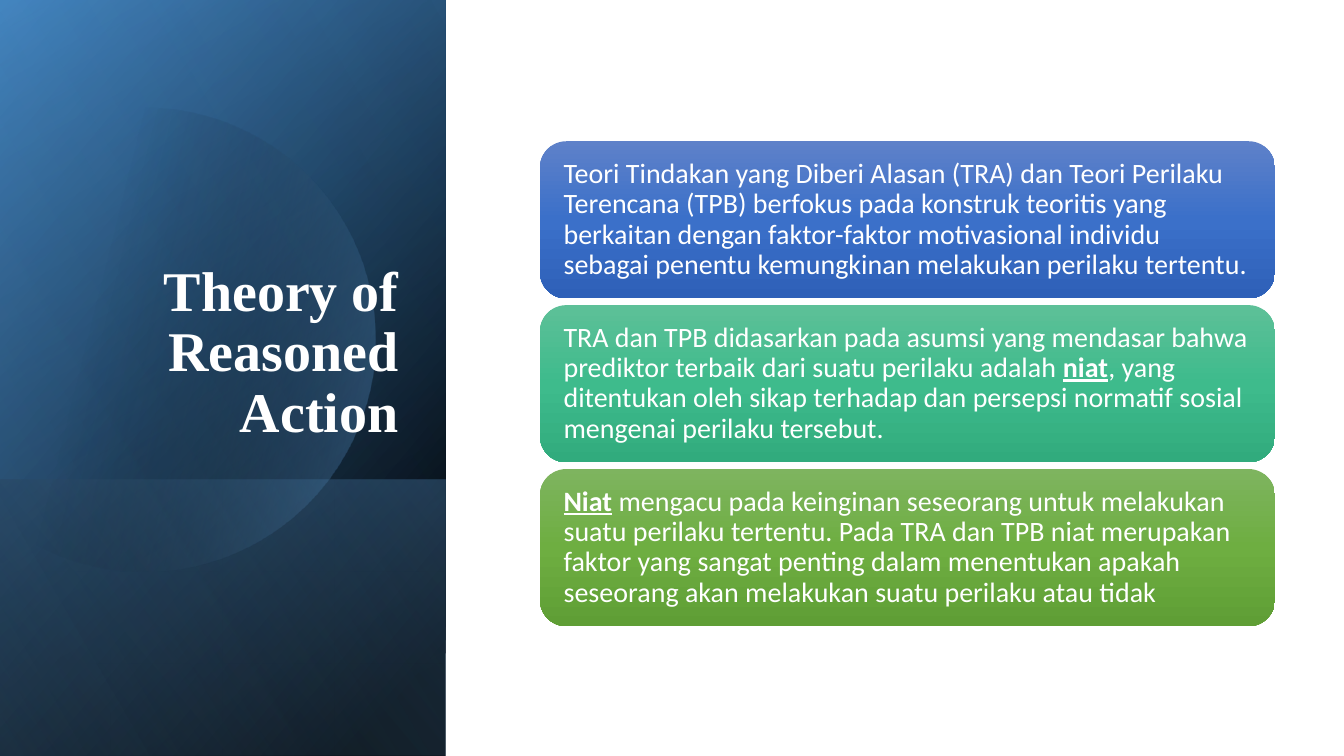
from math import cos, radians, sin

from lxml import etree
from pptx import Presentation
from pptx import util as u
from pptx.dml.color import RGBColor
from pptx.enum import shapes, text
from pptx.oxml.ns import qn

WHITE = RGBColor(0xFF, 0xFF, 0xFF)
BLACK = RGBColor(0x00, 0x00, 0x00)
DEEP_BLUE = RGBColor(0x2E, 0x75, 0xB5)
SKY_BLUE = RGBColor(0x5B, 0x9B, 0xD5)
PALE_BLUE = RGBColor(0x9C, 0xC2, 0xE5)
BLUES = RGBColor(0x5E, 0x81, 0xC9), RGBColor(0x3B, 0x70, 0xC9), RGBColor(0x2E, 0x60, 0xB8)
TEALS = RGBColor(0x5D, 0xC0, 0x98), RGBColor(0x3E, 0xBB, 0x8C), RGBColor(0x31, 0xAB, 0x7D)
GREENS = RGBColor(0x7E, 0xB4, 0x5F), RGBColor(0x6E, 0xAE, 0x41), RGBColor(0x5F, 0x9E, 0x35)

SLIDE_WIDTH, SLIDE_HEIGHT = 33.87, 19.05
PANEL_WIDTH = 11.23
BAND_TOP = 12.09

CARDS = [
    (BLUES, [
        ("Teori Tindakan yang Diberi Alasan (TRA) dan Teori Perilaku Terencana (TPB) "
         "berfokus pada konstruk teoritis yang berkaitan dengan faktor-faktor motivasional "
         "individu sebagai penentu kemungkinan melakukan perilaku tertentu.", False),
    ]),
    (TEALS, [
        ("TRA dan TPB didasarkan pada asumsi yang mendasar bahwa prediktor terbaik dari "
         "suatu perilaku adalah ", False),
        ("niat", True),
        (", yang ditentukan oleh sikap terhadap dan persepsi normatif sosial mengenai "
         "perilaku tersebut.", False),
    ]),
    (GREENS, [
        ("Niat", True),
        (" mengacu pada keinginan seseorang untuk melakukan suatu perilaku tertentu. Pada "
         "TRA dan TPB niat merupakan faktor yang sangat penting dalam menentukan apakah "
         "seseorang akan melakukan suatu perilaku atau tidak", False),
    ]),
]


def paint_gradient(shape, stops, angle):
    """Fill a shape with (position, colour, opacity) stops along a clockwise angle."""
    shape.shadow.inherit = False
    shape.line.fill.background()
    shape.fill.gradient()
    shape.fill.gradient_angle = -angle % 360
    stop_list = shape._element.spPr.find(qn("a:gradFill")).find(qn("a:gsLst"))
    for old_stop in list(stop_list):
        stop_list.remove(old_stop)
    for position, colour, opacity in stops:
        stop = etree.SubElement(stop_list, qn("a:gs"), pos=str(position * 1000))
        tint = etree.SubElement(stop, qn("a:srgbClr"), val=str(colour))
        if opacity < 100:
            etree.SubElement(tint, qn("a:alpha"), val=str(opacity * 1000))


def add_panel_layer(slide, top, stops, angle):
    """Add a gradient layer to the left panel, from top down to the slide's foot."""
    layer = slide.shapes.add_shape(
        shapes.MSO_SHAPE.RECTANGLE, 0, u.Cm(top),
        u.Cm(PANEL_WIDTH), u.Cm(SLIDE_HEIGHT - top))
    paint_gradient(layer, stops, angle)


def add_disc(slide, centre_x, centre_y, radius, reach):
    """Add the translucent disc, cut off straight at the slide's left edge."""
    rim = [(u.Cm(centre_x + radius * cos(radians(a))),
            u.Cm(centre_y + radius * sin(radians(a))))
           for a in range(-reach, reach + 1, 2)]
    outline = slide.shapes.build_freeform(*rim[0])
    outline.add_line_segments(rim[1:], close=True)
    paint_gradient(outline.convert_to_shape(),
                   [(0, BLACK, 0), (29, BLACK, 0), (100, SKY_BLUE, 43)], 14)


def style_run(run, font_name, size, bold, underline=False):
    """Set the look of one run of white text."""
    run.font.name = font_name
    run.font.size = u.Pt(size)
    run.font.bold = bold
    run.font.underline = underline
    run.font.color.rgb = WHITE


def add_title(slide, wording):
    """Add the right-aligned title at the foot of its box."""
    title = slide.shapes.add_textbox(u.Cm(1.63), u.Cm(4.67), u.Cm(8.66), u.Cm(6.65))
    frame = title.text_frame
    frame.word_wrap = True
    frame.vertical_anchor = text.MSO_ANCHOR.BOTTOM
    frame.text = wording
    heading = frame.paragraphs[0]
    heading.alignment = text.PP_ALIGN.RIGHT
    heading.line_spacing = 0.9
    style_run(heading.runs[0], "Times New Roman", 40, True)


def add_card(slide, top, colours, phrases):
    """Add a rounded card whose key phrases are bold and underlined."""
    card = slide.shapes.add_shape(
        shapes.MSO_SHAPE.ROUNDED_RECTANGLE, u.Cm(13.61), u.Cm(top), u.Cm(18.52), u.Cm(3.96))
    paint_gradient(card, [(50 * i, colour, 100) for i, colour in enumerate(colours)], 90)
    frame = card.text_frame
    frame.word_wrap = True
    frame.vertical_anchor = text.MSO_ANCHOR.MIDDLE
    frame.margin_left = frame.margin_right = u.Cm(0.4)
    frame.margin_top = frame.margin_bottom = u.Cm(0.4)
    statement = frame.paragraphs[0]
    statement.alignment = text.PP_ALIGN.LEFT
    statement.line_spacing = 0.9
    for wording, is_key in phrases:
        run = statement.add_run()
        run.text = wording
        style_run(run, "Calibri", 20, is_key, is_key)


def main():
    """Build the slide and save it."""
    deck = Presentation()
    deck.slide_width, deck.slide_height = u.Cm(SLIDE_WIDTH), u.Cm(SLIDE_HEIGHT)
    slide = deck.slides.add_slide(deck.slide_layouts[6])
    add_panel_layer(slide, 0, [(0, BLACK, 100), (8, BLACK, 100), (100, DEEP_BLUE, 100)], 220)
    add_panel_layer(slide, 0, [(0, BLACK, 0), (99, SKY_BLUE, 46), (100, SKY_BLUE, 46)], 240)
    add_panel_layer(slide, BAND_TOP,
                    [(0, SKY_BLUE, 29), (2, SKY_BLUE, 29), (100, BLACK, 30)], 140)
    add_disc(slide, 3.63, 8.55, 5.84, 128)
    add_panel_layer(slide, 0, [(0, BLACK, 0), (99, PALE_BLUE, 11), (100, PALE_BLUE, 11)], 150)
    add_title(slide, "Theory of Reasoned Action")
    for row, (colours, phrases) in enumerate(CARDS):
        add_card(slide, 3.56 + 4.13 * row, colours, phrases)
    deck.save("out.pptx")


if __name__ == "__main__":
    main()
